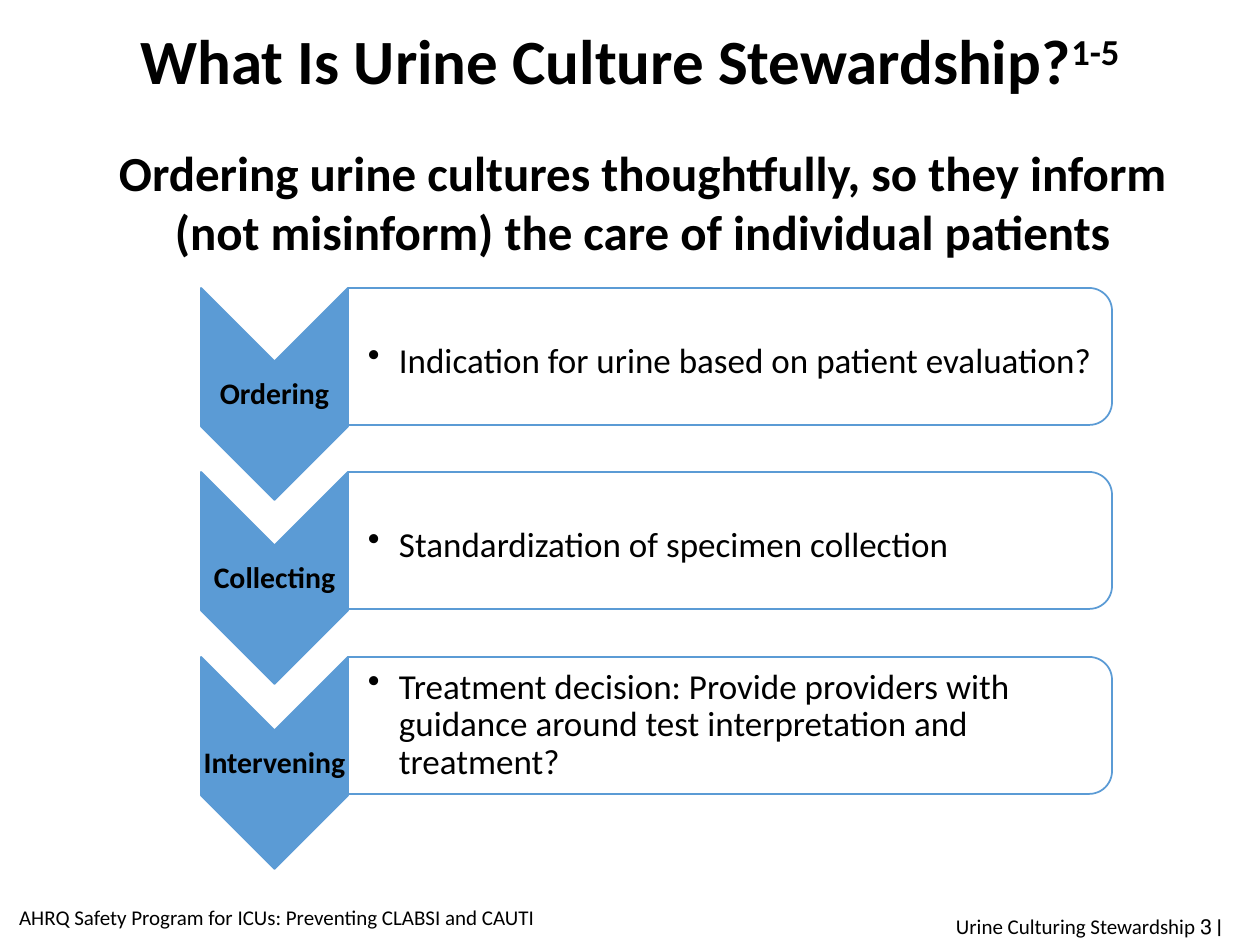
from lxml.etree import SubElement
from pptx import Presentation
from pptx.dml.color import RGBColor
from pptx.enum.shapes import MSO_SHAPE
from pptx.enum.text import MSO_ANCHOR, PP_ALIGN
from pptx.oxml.ns import qn
from pptx.util import Emu, Pt

TITLE = [("What Is Urine Culture Stewardship?", {}), ("1-5", {"baseline": 30000})]
SUMMARY = "Ordering urine cultures thoughtfully, so they inform (not misinform) the care of individual patients"
STEPS = [
    ("Ordering", "Indication for urine based on patient evaluation?", 1.14),
    ("Collecting", "Standardization of specimen collection", 1.14),
    ("Intervening", "Treatment decision: Provide providers with guidance around test interpretation and treatment?", 0.9),
]
PROGRAM = "AHRQ Safety Program for ICUs: Preventing CLABSI and CAUTI"
TOPIC = [("Urine Culturing Stewardship ", {}), ("׀ ", {"face": "Roboto"}), ("3", {})]

BLACK, WHITE, BLUE = "000000", "FFFFFF", "5B9BD5"
FIRST_TOP, TWO_PITCHES = 288, 369
STEP_LEFT, STEP_WIDTH, ARROW_HEIGHT = 201, 147, 212
PANEL_LEFT, PANEL_WIDTH, PANEL_HEIGHT = 348, 764, 137


def px(length):
    return Emu(round(length * 914400 / 126))


def color(value):
    return RGBColor.from_string(value)


def write(shape, content, size, bold=False, align=PP_ALIGN.CENTER, anchor=MSO_ANCHOR.MIDDLE,
          spacing=None, before=None, insets=None, bullet_indent=None):
    frame = shape.text_frame
    frame.word_wrap = True
    frame.vertical_anchor = anchor
    if insets:
        frame.margin_left, frame.margin_top, frame.margin_right, frame.margin_bottom = map(px, insets)
    paragraph = frame.paragraphs[0]
    paragraph.alignment = align
    if bullet_indent:
        properties = paragraph._p.get_or_add_pPr()
        properties.set("marL", str(px(bullet_indent)))
        properties.set("indent", str(-px(bullet_indent)))
        SubElement(properties, qn("a:buChar"), char="•")
    if spacing:
        paragraph.line_spacing = spacing
    if before is not None:
        paragraph.space_before = Pt(before)
    for words, style in [(content, {})] if isinstance(content, str) else content:
        run = paragraph.add_run()
        run.text = words
        run.font.name = style.get("face", "Calibri")
        run.font.size = Pt(size)
        run.font.bold = bold
        run.font.color.rgb = color(BLACK)
        if "baseline" in style:
            run._r.get_or_add_rPr().set("baseline", str(style["baseline"]))


def add_text(slide, box, content, size, **style):
    write(slide.shapes.add_textbox(*map(px, box)), content, size, **style)


def add_turned(slide, kind, box, fill):
    """Add a shape turned a quarter clockwise that covers the given box."""
    left, top, width, height = box
    shift = (width - height) / 2
    shape = slide.shapes.add_shape(kind, *map(px, (left + shift, top - shift, height, width)))
    shape.rotation = 90
    shape.shadow.inherit = False
    shape.fill.solid()
    shape.fill.fore_color.rgb = color(fill)
    shape.line.color.rgb = color(BLUE)
    shape.line.width = Pt(1)
    return shape


def add_step(slide, top, label, detail, spacing):
    add_turned(slide, MSO_SHAPE.CHEVRON, (STEP_LEFT, top, STEP_WIDTH, ARROW_HEIGHT), BLUE)
    add_text(slide, (STEP_LEFT, top + 75, STEP_WIDTH, 63), label, 17, bold=True,
             spacing=0.9, insets=(1, 1, 1, 1))
    panel = add_turned(slide, MSO_SHAPE.ROUND_2_SAME_RECTANGLE,
                       (PANEL_LEFT, top, PANEL_WIDTH, PANEL_HEIGHT), WHITE)
    panel_fill = panel._element.spPr.find(qn("a:solidFill")).find(qn("a:srgbClr"))
    SubElement(panel_fill, qn("a:alpha"), val="90000")
    add_text(slide, (PANEL_LEFT, top + 7, 756, 123), detail, 20, align=PP_ALIGN.LEFT,
             spacing=spacing, insets=(20, 1, 1, 1), bullet_indent=31)


def main():
    deck = Presentation()
    deck.slide_width, deck.slide_height = px(1260), px(945)
    slide = deck.slides.add_slide(deck.slide_layouts[5])
    title = slide.shapes.title
    title.left, title.top, title.width, title.height = map(px, (87, 1, 1086, 112))
    write(title, TITLE, 36, bold=True, spacing=1.05)
    add_text(slide, (68, 136, 1149, 188), SUMMARY, 28, bold=True, anchor=MSO_ANCHOR.TOP)
    for index, step in enumerate(STEPS):
        add_step(slide, FIRST_TOP + index * TWO_PITCHES // 2, *step)
    add_text(slide, (0, 892, 554, 50), PROGRAM, 12)
    add_text(slide, (939, 901, 295, 50), TOPIC, 12, align=PP_ALIGN.RIGHT)
    deck.save("out.pptx")


if __name__ == "__main__":
    main()
